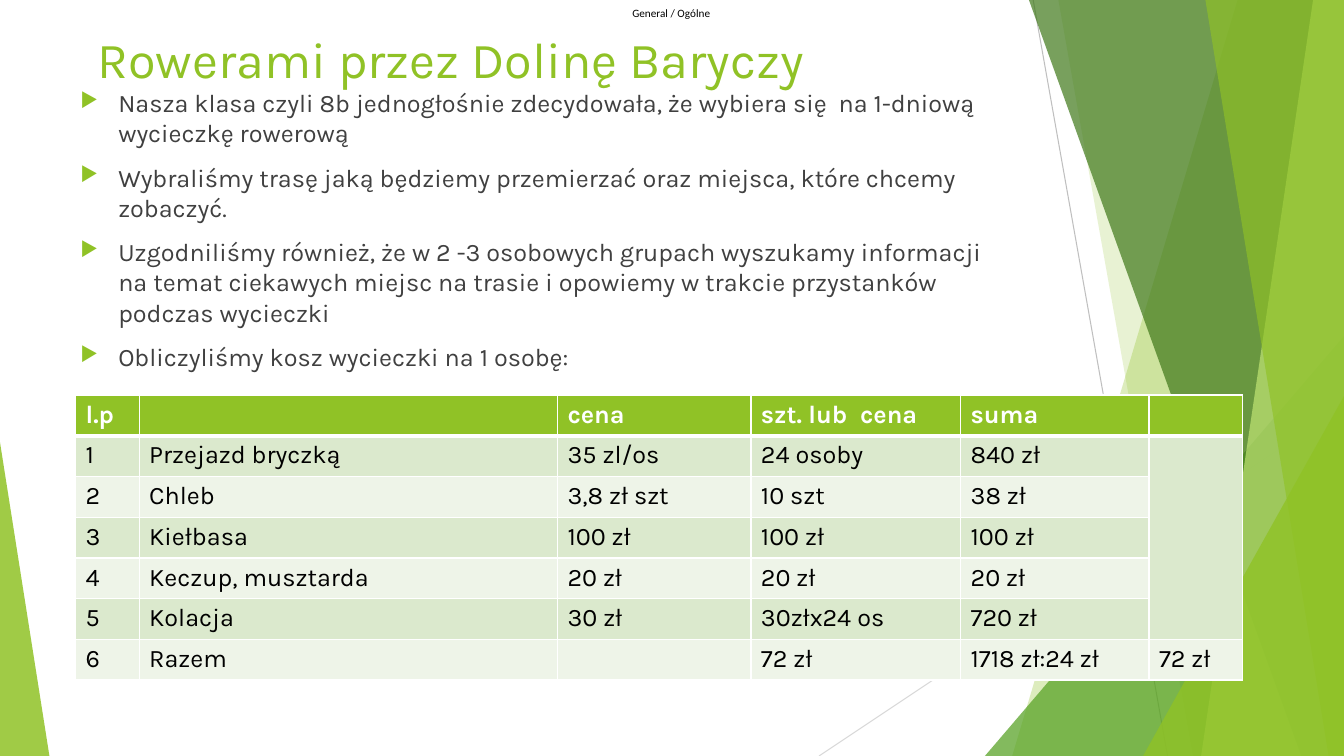
from dataclasses import dataclass
from lxml import etree
from pptx import Presentation
from pptx.dml.color import RGBColor
from pptx.enum.shapes import MSO_CONNECTOR, MSO_SHAPE
from pptx.enum.text import MSO_ANCHOR, PP_ALIGN
from pptx.oxml.ns import qn
from pptx.util import Pt

LINE = MSO_CONNECTOR.STRAIGHT
TRI = MSO_SHAPE.ISOSCELES_TRIANGLE
TOP, MID = MSO_ANCHOR.TOP, MSO_ANCHOR.MIDDLE
LEFT, CENTER = PP_ALIGN.LEFT, PP_ALIGN.CENTER


@dataclass(frozen=True)
class Theme:
    """Colours, fonts and type sizes."""
    lime: str = "90C226"
    leaf: str = "54A021"
    moss: str = "3F7819"
    pale: str = "C0E474"
    ray: str = "BFBFBF"
    haze: str = "D9D9D9"
    ink: str = "404040"
    black: str = "000000"
    white: str = "FFFFFF"
    odd: str = "DBE9CD"
    even: str = "EEF4E8"
    font: str = "Karla"
    plain: str = "Calibri"
    head: int = 36
    body: int = 18
    tag: int = 8


T = Theme()

POINTS = [
    "Nasza klasa czyli 8b jednogłośnie zdecydowała, że wybiera się  na 1-dniową wycieczkę rowerową",
    "Wybraliśmy trasę jaką będziemy przemierzać oraz miejsca, które chcemy zobaczyć.",
    "Uzgodniliśmy również, że w 2 -3 osobowych grupach wyszukamy informacji na temat "
    "ciekawych miejsc na trasie i opowiemy w trakcie przystanków podczas wycieczki",
    "Obliczyliśmy kosz wycieczki na 1 osobę:",
]
COSTS = [
    ["l.p", "", "cena", "szt. lub  cena", "suma", ""],
    ["1", "Przejazd bryczką", "35 zl/os", "24 osoby", "840 zł", ""],
    ["2", "Chleb", "3,8 zł szt", "10 szt", "38 zł", ""],
    ["3", "Kiełbasa", "100 zł", "100 zł", "100 zł", ""],
    ["4", "Keczup, musztarda", "20 zł", "20 zł", "20 zł", ""],
    ["5", "Kolacja", "30 zł", "30złx24 os", "720 zł", ""],
    ["6", "Razem", "", "72 zł", "1718 zł:24 zł", "72 zł"],
]
COLS = [45.4, 298.8, 138.2, 149.8, 134.6, 67]


def add(parent, tag, **attrs):
    """Append a drawing element with the given attributes."""
    return etree.SubElement(parent, qn(tag), {k: str(v) for k, v in attrs.items()})


def write(para, text, size, color, font=T.font, bold=False):
    """Add one styled run to a paragraph."""
    run = para.add_run()
    run.text = text
    run.font.size = Pt(size)
    run.font.name = font
    run.font.bold = bold
    run.font.color.rgb = RGBColor.from_string(color)


def paint(shape, color, alpha):
    """Fill a shape with a partly clear colour and no outline."""
    shape.shadow.inherit = False
    shape.fill.solid()
    shape.fill.fore_color.rgb = RGBColor.from_string(color)
    tint = shape._element.spPr.find(qn("a:solidFill")).find(qn("a:srgbClr"))
    add(tint, "a:alpha", val=alpha * 1000)
    shape.line.fill.background()


def ray(slide, x1, y1, x2, y2, color):
    """Draw one thin line."""
    line = slide.shapes.add_connector(LINE, Pt(x1), Pt(y1), Pt(x2), Pt(y2))
    line.line.color.rgb = RGBColor.from_string(color)
    line.line.width = Pt(0.75)
    add(line._element.spPr, "a:effectLst")


def blade(slide, box, top, foot, color, alpha):
    """Draw a slanted panel that reaches the right edge of the box."""
    x, y, w, h = box
    pen = slide.shapes.build_freeform(Pt(x + top), Pt(y), scale=1.0)
    rest = [(w, 0), (w, h), (foot, h)]
    pen.add_line_segments([(Pt(x + a), Pt(y + b)) for a, b in rest])
    paint(pen.convert_to_shape(), color, alpha)


def wedge(slide, x, y, w, h, tip, color, alpha):
    """Draw a right triangle with its tip at the left (0) or right (1)."""
    shape = slide.shapes.add_shape(TRI, Pt(x), Pt(y), Pt(w), Pt(h))
    shape.adjustments[0] = tip
    paint(shape, color, alpha)


def decor(slide, box):
    """Draw the green facets at both sides of the box."""
    x, y, w, h = box
    ray(slide, x + 738, y, x + 834, y + h, T.ray)
    ray(slide, x + w, y + 290, x + 585, y + h, T.haze)
    blade(slide, box, 884, 723, T.lime, 30)
    blade(slide, box, 756, 852, T.lime, 20)
    wedge(slide, x + w - 256.5, y + h - 300, 256.5, 300, 1, T.leaf, 72)
    blade(slide, box, 735, 929.5, T.moss, 70)
    blade(slide, box, 938, 858, T.pale, 70)
    blade(slide, box, 861, 949, T.lime, 65)
    wedge(slide, x + w - 143.5, y + h - 257, 143.5, 257, 1, T.lime, 80)
    wedge(slide, x, y + h - 224, 35.3, 224, 0, T.lime, 85)


def frame(slide, box, anchor=TOP, wrap=True):
    """Add an empty text box and return its text frame."""
    tf = slide.shapes.add_textbox(*map(Pt, box)).text_frame
    tf.word_wrap = wrap
    tf.vertical_anchor = anchor
    return tf


def label(slide, box):
    """Write the small label at the top."""
    tf = frame(slide, box, MID, False)
    tf.margin_left = tf.margin_right = tf.margin_top = tf.margin_bottom = 0
    para = tf.paragraphs[0]
    para.alignment = CENTER
    write(para, "General / Ogólne", T.tag, T.black, T.plain)


def title(slide, box):
    """Write the heading."""
    para = frame(slide, box).paragraphs[0]
    para.alignment = LEFT
    write(para, "Rowerami przez Dolinę Baryczy", T.head, T.lime)


def bullets(slide, box):
    """Write the list of points."""
    tf = frame(slide, box)
    for i, text in enumerate(POINTS):
        para = tf.add_paragraph() if i else tf.paragraphs[0]
        para.space_before = Pt(10)
        props = para._p.get_or_add_pPr()
        props.set("marL", str(Pt(27)))
        props.set("indent", str(Pt(-27)))
        add(add(props, "a:buClr"), "a:srgbClr", val=T.lime)
        add(props, "a:buSzPct", val=80000)
        add(props, "a:buChar", char="▶")
        write(para, text, T.body, T.ink)


def edge(cell, foot):
    """Give a cell white borders, with a set width at its foot."""
    props = cell._tc.get_or_add_tcPr()
    for side, width in (("L", 1), ("R", 1), ("T", 1), ("B", foot)):
        line = add(props, f"a:ln{side}", w=Pt(width))
        add(add(line, "a:solidFill"), "a:srgbClr", val=T.white)


def costs(slide, box):
    """Build the table of costs."""
    rows = len(COSTS)
    grid = slide.shapes.add_table(rows, len(COLS), *map(Pt, box)).table
    for col, width in zip(grid.columns, COLS):
        col.width = Pt(width)
    for r, texts in enumerate(COSTS):
        grid.rows[r].height = Pt(box[3] / rows)
        fill = (T.odd if r % 2 else T.even) if r else T.lime
        for c, text in enumerate(texts):
            cell = grid.cell(r, c)
            edge(cell, 1 if r else 3)
            cell.fill.solid()
            cell.fill.fore_color.rgb = RGBColor.from_string(fill)
            if text:
                color = T.black if r else T.white
                write(cell.text_frame.paragraphs[0], text, T.body, color, bold=r == 0)
    grid.cell(1, 5).merge(grid.cell(5, 5))


def main():
    """Build and save the slide."""
    deck = Presentation()
    deck.slide_width, deck.slide_height = Pt(960), Pt(540)
    slide = deck.slides.add_slide(deck.slide_layouts[6])
    decor(slide, (0, 0, 960, 540))
    label(slide, (442, 0, 75, 18))
    title(slide, (62.6, 16.6, 676.8, 103.7))
    bullets(slide, (50.4, 59, 676.8, 305.3))
    costs(slide, (54, 282.2, sum(COLS), 203.7))
    deck.save("out.pptx")


if __name__ == "__main__":
    main()
